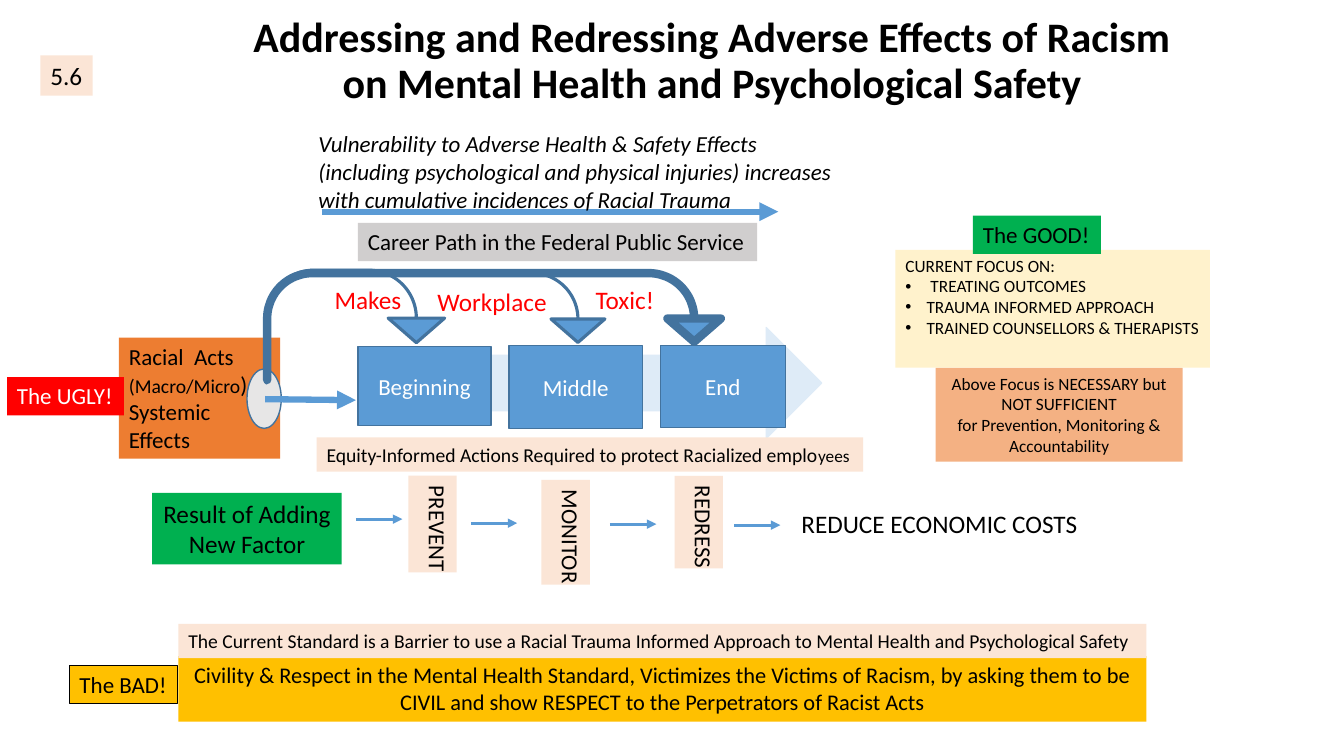
from dataclasses import dataclass

from lxml import etree
from pptx import Presentation
from pptx import util as u
from pptx.dml.color import RGBColor
from pptx.enum import shapes, text
from pptx.oxml.ns import qn


@dataclass(frozen=True)
class Theme:
    font: str = "Calibri"
    # colours
    black: str = "000000"
    white: str = "FFFFFF"
    red: str = "FF0000"
    green: str = "00B050"
    gold: str = "FFC000"
    orange: str = "ED7D31"
    salmon: str = "F4B183"
    peach: str = "FBE5D6"
    cream: str = "FFF2CC"
    grey: str = "D0CECE"
    light_grey: str = "E7E6E6"
    blue: str = "5B9BD5"
    dark_blue: str = "43739E"
    pale_blue: str = "DEEBF7"
    # type sizes
    heading: float = 30
    large: float = 18
    body: float = 16.4
    medium: float = 16
    note: float = 14
    small: float = 12.3


class SlideBuilder:
    def __init__(self, theme):
        self.theme = theme
        self.deck = Presentation()
        self.deck.slide_width = u.Inches(13.33)
        self.deck.slide_height = u.Inches(7.5)
        self.slide = self.deck.slides.add_slide(self.deck.slide_layouts[1])

    def paint(self, item, fill=None, line=None, width=1):
        if fill:
            item.fill.solid()
            item.fill.fore_color.rgb = RGBColor.from_string(fill)
        if line:
            item.line.color.rgb = RGBColor.from_string(line)
            item.line.width = u.Pt(width)
        else:
            item.line.fill.background()

    def set_text(self, frame, paragraphs, size, color=None, align=text.PP_ALIGN.LEFT,
                 spacing=None, **font):
        """Each paragraph is a string or a list of (words, size) runs."""
        for i, runs in enumerate(paragraphs):
            para = frame.paragraphs[0] if i == 0 else frame.add_paragraph()
            para.alignment = align
            para.space_before = u.Pt(0)
            if spacing:
                para.line_spacing = spacing
            for words, points in [(runs, size)] if isinstance(runs, str) else runs:
                for n, line in enumerate(words.split("\n")):
                    if n:
                        para.add_line_break()
                    run = para.add_run()
                    run.text = line
                    run.font.color.rgb = RGBColor.from_string(color or self.theme.black)
                    style = {"name": self.theme.font, "size": u.Pt(points), **font}
                    for name, value in style.items():
                        setattr(run.font, name, value)

    def place(self, item, box):
        for name, value in zip(("left", "top", "width", "height"), box):
            setattr(item, name, u.Inches(value))

    def title(self, box, words):
        heading = self.slide.shapes.title
        self.place(heading, box)
        heading.text_frame.auto_size = text.MSO_AUTO_SIZE.NONE
        heading.text_frame.vertical_anchor = text.MSO_ANCHOR.MIDDLE
        self.set_text(heading.text_frame, [words], self.theme.heading,
                      align=text.PP_ALIGN.CENTER, spacing=0.9, bold=True)

    def bullets(self, box, lead, items, fill):
        body = self.slide.placeholders[1]
        self.place(body, box)
        self.paint(body, fill)
        frame = body.text_frame
        frame.word_wrap = False
        frame.auto_size = text.MSO_AUTO_SIZE.SHAPE_TO_FIT_TEXT
        self.set_text(frame, [lead, *items], self.theme.small)
        for i, para in enumerate(frame.paragraphs):
            props = para._p.get_or_add_pPr()
            indent = u.Inches(0.21) if i else 0
            props.set("marL", str(indent))
            props.set("indent", str(-indent))
            if i:
                etree.SubElement(props, qn("a:buFont")).set("typeface", "Arial")
                etree.SubElement(props, qn("a:buChar")).set("char", "•")
            else:
                etree.SubElement(props, qn("a:buNone"))

    def label(self, box, paragraphs, size=None, fill=None, line=None, wrap=True,
              vertical=False, **style):
        item = self.slide.shapes.add_textbox(*map(u.Inches, box))
        self.paint(item, fill, line, 0.75)
        frame = item.text_frame
        frame.word_wrap = wrap
        frame.auto_size = text.MSO_AUTO_SIZE.SHAPE_TO_FIT_TEXT
        if vertical:
            frame._txBody.bodyPr.set("vert", "vert")
        self.set_text(frame, paragraphs, size or self.theme.body, **style)

    def shape(self, kind, box, fill, line, width=1, adjust=(), words=None):
        item = self.slide.shapes.add_shape(kind, *map(u.Inches, box))
        item.shadow.inherit = False
        self.paint(item, fill, line, width)
        for i, value in enumerate(adjust):
            item.adjustments[i] = value
        if words:
            frame = item.text_frame
            frame.vertical_anchor = text.MSO_ANCHOR.MIDDLE
            for side, gap in {"left": 0.07, "right": 0.07, "top": 0.03, "bottom": 0.03}.items():
                setattr(frame, f"margin_{side}", u.Inches(gap))
            self.set_text(frame, [words], self.theme.body, self.theme.white,
                          text.PP_ALIGN.CENTER)

    def arrow(self, start, end, width):
        link = self.slide.shapes.add_connector(
            shapes.MSO_CONNECTOR.STRAIGHT, *map(u.Inches, (*start, *end)))
        link.line.color.rgb = RGBColor.from_string(self.theme.blue)
        link.line.width = u.Pt(width)
        props = link._element.spPr
        etree.SubElement(props.find(qn("a:ln")), qn("a:tailEnd")).set("type", "triangle")
        etree.SubElement(props, qn("a:effectLst"))


def main():
    t = Theme()
    s = SlideBuilder(t)
    kinds = shapes.MSO_SHAPE
    center = text.PP_ALIGN.CENTER

    # Title and current focus list
    s.title((2.12, -0.11, 9.89, 1.45), "Addressing and Redressing Adverse Effects of Racism\n"
            "on Mental Health and Psychological Safety")
    s.bullets((8.88, 2.48, 3.12, 0.93), "CURRENT FOCUS ON:",
              [" TREATING OUTCOMES", "TRAUMA INFORMED APPROACH",
               "TRAINED COUNSELLORS & THERAPISTS"], t.cream)

    # Source of harm
    s.label((1.18, 3.35, 1.6, 1.2),
            ["Racial  Acts", [("(Macro/Micro", t.note), (")", t.body)], "Systemic Effects"],
            fill=t.orange)
    s.shape(kinds.OVAL, (2.45, 3.66, 0.34, 0.59), t.light_grey, t.dark_blue)

    # Curved arrows into the first two career stages
    bend = (0, 0.25, 0.218, 0.438, 0.643)
    for box in ((2.64, 2.71, 3.36, 1.07), (2.64, 2.68, 1.77, 1.12)):
        s.shape(kinds.U_TURN_ARROW, box, t.blue, t.dark_blue, 2.25, bend)

    # Vulnerability statement
    s.arrow((3.19, 2.1), (7.72, 2.1), 4.5)
    s.label((3.06, 1.24, 5.41, 0.93),
            ["Vulnerability to Adverse Health & Safety Effects (including psychological and "
             "physical injuries) increases with cumulative incidences of Racial Trauma"],
            italic=True)

    # Career path
    s.shape(kinds.RIGHT_ARROW, (4.42, 3.25, 3.73, 1.1), t.pale_blue, t.pale_blue)
    for stage, box in {"Beginning": (3.55, 3.44, 1.32, 0.78),
                       "Middle": (5.05, 3.43, 1.32, 0.82),
                       "End": (6.55, 3.43, 1.24, 0.81)}.items():
        s.shape(kinds.RECTANGLE, box, t.blue, t.dark_blue, words=stage)
    s.label((3.55, 2.21, 3.96, 0.38), ["Career Path in the Federal Public Service"],
            fill=t.grey, wrap=False)
    s.shape(kinds.U_TURN_ARROW, (2.65, 2.71, 4.5, 1.06), t.blue, t.dark_blue, 6, bend)
    s.arrow((2.63, 3.96), (3.53, 3.97), 4.5)
    for word, box in {"Makes": (3.22, 2.77, 0.87, 0.4),
                      "Workplace": (4.24, 2.79, 1.29, 0.4),
                      "Toxic!": (5.81, 2.77, 0.84, 0.4)}.items():
        s.label(box, [word], t.large, color=t.red, wrap=word != "Makes")

    # Actions and their result
    s.label((3.14, 4.34, 5.42, 0.34),
            [[("Equity-Informed Actions Required to protect Racialized emplo", t.note),
              ("yees", t.small)]], fill=t.peach)
    for action, box in {"PREVENT": (4.05, 4.72, 0.48, 0.96),
                        "MONITOR": (5.37, 4.76, 0.48, 1.04),
                        "REDRESS": (6.69, 4.72, 0.48, 0.92)}.items():
        s.label(box, [action], fill=t.peach, wrap=False, vertical=True)
    for x, y in ((3.53, 5.15), (4.67, 5.19), (6.05, 5.2), (7.28, 5.21)):
        s.arrow((x, y), (x + 0.46, y), 2.25)
    s.label((1.51, 4.89, 1.88, 0.71), ["Result of Adding", "New Factor"], t.large,
            fill=t.green, wrap=False, align=center)
    s.label((7.85, 4.99, 2.96, 0.4), ["REDUCE ECONOMIC COSTS"], t.large, wrap=False)

    # Limits of the current focus and standard
    s.label((9.28, 3.65, 2.45, 0.93),
            ["Above Focus is NECESSARY but NOT SUFFICIENT",
             "for Prevention, Monitoring & Accountability"], t.small, fill=t.salmon, align=center)
    s.label((1.77, 6.51, 9.6, 0.65),
            ["Civility & Respect in the Mental Health Standard, Victimizes the Victims of Racism, "
             "by asking them to be CIVIL and show RESPECT to the Perpetrators of Racist Acts"],
            t.medium, fill=t.gold, align=center)
    s.label((1.77, 6.19, 9.6, 0.34),
            ["The Current Standard is a Barrier to use a Racial Trauma Informed Approach to "
             "Mental Health and Psychological Safety"], t.note, fill=t.peach)

    # Verdict tags and section number
    s.label((0.07, 3.74, 1.16, 0.38), ["The UGLY!"], fill=t.red, color=t.white, wrap=False)
    s.label((0.69, 6.6, 1.07, 0.38), ["The BAD!"], fill=t.gold, line=t.black, wrap=False)
    s.label((9.65, 2.14, 1.27, 0.38), ["The GOOD!"], fill=t.green, wrap=False)
    s.label((0.4, 0.55, 0.52, 0.4), ["5.6"], t.large, fill=t.peach, wrap=False)

    s.deck.save("out.pptx")


if __name__ == "__main__":
    main()
